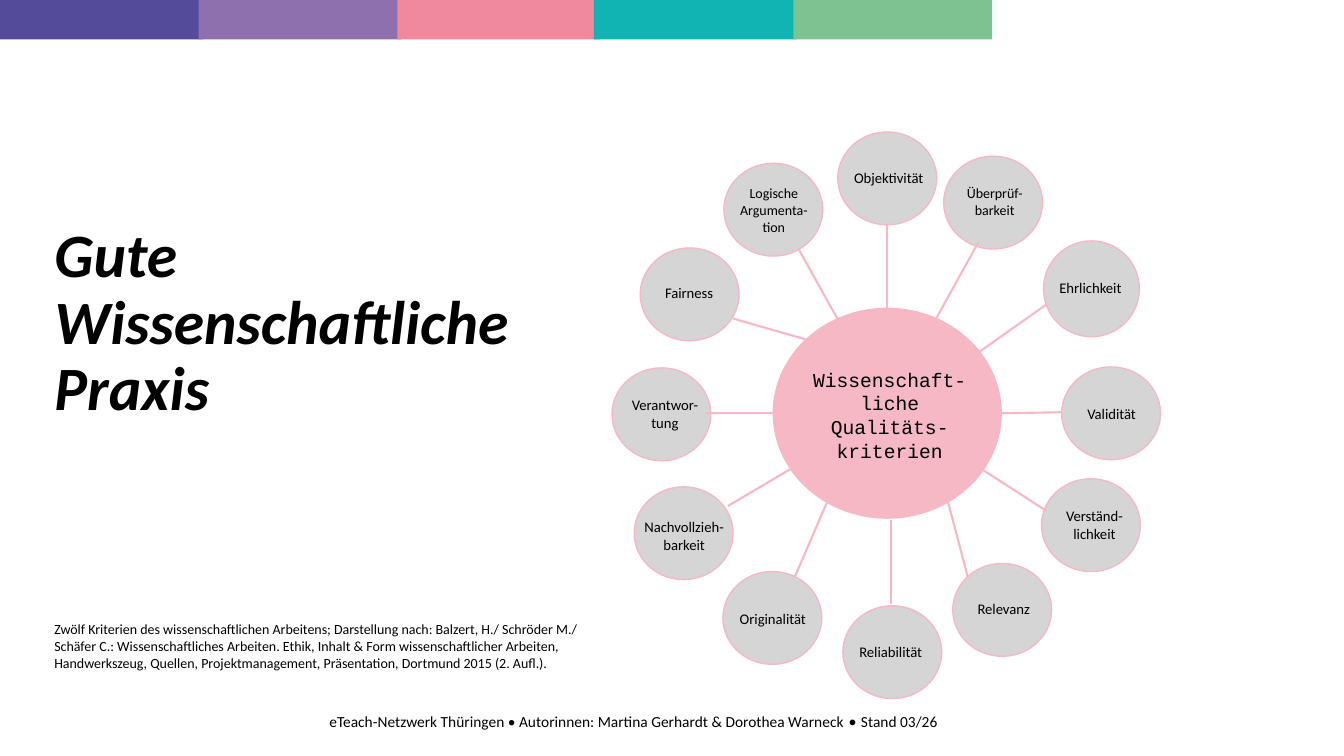
from dataclasses import dataclass

from pptx import Presentation
from pptx import util as u
from pptx.dml.color import RGBColor
from pptx.enum import shapes, text
from pptx.oxml.ns import qn
from lxml import etree

TITLE = "Gute Wissenschaftliche Praxis"
SOURCE = (
    "Zwölf Kriterien des wissenschaftlichen Arbeitens; Darstellung nach: "
    "Balzert, H./ Schröder M./ Schäfer C.: Wissenschaftliches Arbeiten. "
    "Ethik, Inhalt & Form wissenschaftlicher Arbeiten, Handwerkszeug, Quellen, "
    "Projektmanagement, Präsentation, Dortmund 2015 (2. Aufl.)."
)
FOOTER = [
    ("eTeach-Netzwerk Thüringen • Autorinnen: Martina Gerhardt & Dorothea Warneck ", "Calibri"),
    ("• ", "Lato"),
    ("Stand 03/26 ", "Calibri"),
]
HUB_LABEL = "Wissenschaft-liche Qualitäts-kriterien"
HUB = (7.67, 3.06, 2.26, 2.08)
CIRCLE_SIZE = (0.98, 0.92)
LABEL_WIDTH = 1.07

# name, lines, circle corner, label corner, spoke start, spoke end
CRITERIA = [
    ("Objektivität", 1, (8.31, 1.31), (8.28, 1.63), (8.8, 2.23), (8.8, 3.06)),
    ("Überprüf-barkeit", 2, (9.36, 1.55), (9.42, 1.78), (9.7, 2.41), (9.28, 3.17)),
    ("Ehrlichkeit", 1, (10.35, 2.39), (10.28, 2.72), (10.38, 3.02), (9.7, 3.5)),
    ("Validität", 1, (10.53, 3.64), (10.49, 3.97), (10.53, 4.09), (9.93, 4.1)),
    ("Verständ-lichkeit", 2, (10.33, 4.75), (10.32, 4.98), (10.38, 5.07), (9.7, 4.63)),
    ("Relevanz", 1, (9.45, 5.59), (9.42, 5.9), (9.6, 5.73), (9.4, 4.97)),
    ("Reliabilität", 1, (8.36, 6.01), (8.3, 6.33), (8.84, 5.99), (8.84, 5.16)),
    ("Originalität", 1, (7.17, 5.67), (7.13, 6), (7.88, 5.73), (8.2, 4.99)),
    ("Nachvollzieh-\nbarkeit", 2, (6.29, 4.83), (6.19, 5.09), (7.22, 5.02), (7.88, 4.63)),
    ("Verantwor-tung", 2, (6.07, 3.65), (6.06, 3.88), (7, 4.1), (7.67, 4.1)),
    ("Fairness", 1, (6.35, 2.46), (6.3, 2.77), (7.27, 3.16), (8, 3.37)),
    ("Logische Argumenta-tion", 3, (7.18, 1.62), (7.14, 1.78), (7.92, 2.47), (8.31, 3.17)),
]
CIRCLE_SIZES = {"Ehrlichkeit": (0.95, 0.95)}
LABEL_WIDTHS = {"Überprüf-barkeit": 0.89, "Nachvollzieh-\nbarkeit": 1.19}
SMALL_LABELS = {"Überprüf-barkeit", "Logische Argumenta-tion"}
BAND = [
    (0, 2.01, "544B9A"),
    (1.97, 2.01, "8F70AF"),
    (3.94, 2.01, "F0889E"),
    (5.89, 2.01, "12B3B3"),
    (7.87, 1.97, "7EC291"),
]


@dataclass(frozen=True)
class Theme:
    ink: str = "000000"
    pink: str = "F6B8C5"
    grey: str = "D5D5D5"
    font: str = "Calibri"
    hub_font: str = "Courier New"
    title: float = 44
    hub: float = 14
    footer: float = 11
    label: float = 10.5
    small: float = 10


theme = Theme()
deck = Presentation()
deck.slide_width, deck.slide_height = u.Inches(13.33), u.Inches(7.5)
page = deck.slides.add_slide(deck.slide_layouts[5])


def inches(values):
    return [u.Inches(value) for value in values]


def write(box, content, size, font=theme.font, align=text.PP_ALIGN.LEFT,
          anchor=text.MSO_ANCHOR.TOP, spacing=None, bold=False, italic=False):
    frame = box.text_frame
    frame.word_wrap = True
    frame.auto_size = text.MSO_AUTO_SIZE.NONE
    frame.vertical_anchor = anchor
    if isinstance(content, str):
        lines = [[(line, font)] for line in content.split("\n")]
    else:
        lines = [content]
    for index, spans in enumerate(lines):
        para = frame.add_paragraph() if index else frame.paragraphs[0]
        para.alignment = align
        para.line_spacing = spacing
        for words, face in spans:
            span = para.add_run()
            span.text = words
            span.font.name = face
            span.font.size = u.Pt(size)
            span.font.bold, span.font.italic = bold, italic
            span.font.color.rgb = RGBColor.from_string(theme.ink)


def add_text(area, content, size, **style):
    write(page.shapes.add_textbox(*inches(area)), content, size, **style)


def add_solid(kind, area, fill, line=None):
    shape = page.shapes.add_shape(kind, *inches(area))
    shape.shadow.inherit = False
    shape.fill.solid()
    shape.fill.fore_color.rgb = RGBColor.from_string(fill)
    if line:
        shape.line.color.rgb = RGBColor.from_string(line)
        shape.line.width = u.Pt(1)
    else:
        shape.line.fill.background()


def add_spoke(start, end):
    spoke = page.shapes.add_connector(
        shapes.MSO_CONNECTOR.STRAIGHT, *inches(start + end))
    spoke.line.color.rgb = RGBColor.from_string(theme.pink)
    spoke.line.width = u.Pt(1.5)
    etree.SubElement(spoke._element.spPr, qn("a:effectLst"))


def main():
    centre, middle = text.PP_ALIGN.CENTER, text.MSO_ANCHOR.MIDDLE
    oval = shapes.MSO_SHAPE.OVAL

    add_text((2.66, 6.96, 7.28, 0.4), FOOTER, theme.footer, align=centre, anchor=middle)
    for left, width, colour in BAND:
        add_solid(shapes.MSO_SHAPE.RECTANGLE, (left, 0, width, 0.39), colour)

    title = page.shapes.title
    title.left, title.top, title.width, title.height = inches((0.44, 2.25, 5.29, 1.93))
    write(title, TITLE, theme.title, anchor=middle, spacing=0.9, bold=True, italic=True)
    add_text((0.44, 6.11, 5.46, 0.61), SOURCE, theme.small)

    add_solid(oval, HUB, theme.pink, line=theme.pink)
    add_text((7.92, 3.6, 1.81, 1.04), HUB_LABEL, theme.hub,
             font=theme.hub_font, align=centre)

    for name, lines, circle, label, start, end in CRITERIA:
        size = CIRCLE_SIZES.get(name, CIRCLE_SIZE)
        add_solid(oval, circle + size, theme.grey, line=theme.pink)
        area = label + (LABEL_WIDTHS.get(name, LABEL_WIDTH), 0.11 + 0.17 * lines)
        add_text(area, name, theme.small if name in SMALL_LABELS else theme.label,
                 align=centre)
        add_spoke(start, end)

    deck.save("out.pptx")


if __name__ == "__main__":
    main()
